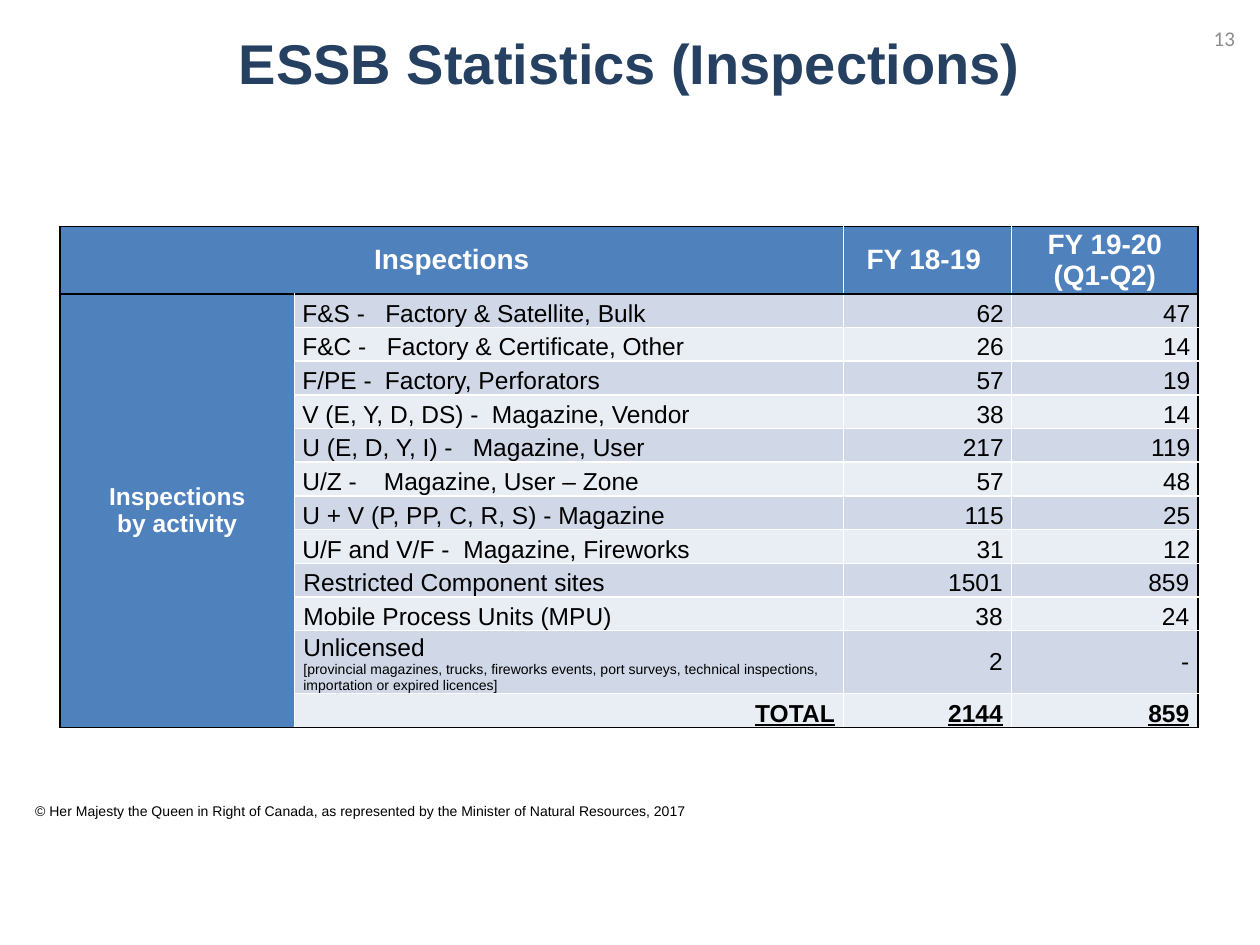
"""Builds the slide of ESSB inspection statistics."""
from copy import deepcopy

from pptx import Presentation, util as u
from pptx.dml.color import RGBColor
from pptx.enum import text as t
from pptx.oxml.ns import qn
from lxml import etree

Pt = u.Pt
LEFT, CENTER, RIGHT = t.PP_ALIGN.LEFT, t.PP_ALIGN.CENTER, t.PP_ALIGN.RIGHT
MIDDLE, BOTTOM = t.MSO_ANCHOR.MIDDLE, t.MSO_ANCHOR.BOTTOM
BLUE, BANDS = "4F81BD", ("E9EDF4", "D0D8E8")
BLACK, WHITE = "000000", "FFFFFF"

TITLE = "ESSB Statistics (Inspections)"
PAGE_NUMBER = "13"
COPYRIGHT = ("© Her Majesty the Queen in Right of Canada, as represented by "
             "the Minister of Natural Resources, 2017")
HEADINGS = ["Inspections", "", "FY 18-19 ", "FY 19-20 (Q1-Q2)"]
SIDE_HEADING = "Inspections\vby activity"
LICENSED = [
    ("F&S -\tFactory & Satellite, Bulk", "62", "47", 47.4),
    ("F&C -\tFactory & Certificate, Other", "26", "14", 48.3),
    ("F/PE -\tFactory, Perforators", "57", "19", 47.2),
    ("V (E, Y, D, DS) -\tMagazine, Vendor", "38", "14", 108.3),
    ("U (E, D, Y, I) -\tMagazine, User", "217", "119", 97.4),
    ("U/Z -\tMagazine, User – Zone", "57", "48", 46.6),
    ("U + V (P, PP, C, R, S) - Magazine", "115", "25", None),
    ("U/F and V/F -\tMagazine, Fireworks", "31", "12", 92),
]
OTHERS = [
    ("Restricted Component sites", "1501", "859", None),
    ("Mobile Process Units (MPU)", "38", "24", None),
    ("Unlicensed", "2", "-", None),
    ("TOTAL", "2144", "859", None),
]
UNLICENSED_NOTE = ("[provincial magazines, trucks, fireworks events, port surveys, "
                   "technical inspections, importation or expired licences]")
ROWS = LICENSED + OTHERS
LAST = len(ROWS)
NOTE_ROW = LAST - 1
COLUMN_WIDTHS = [134, 313.8, 96, 106.6]
ROW_HEIGHTS = [38.4] + [19.27] * (LAST - 2) + [36, 19.27]


def color(value):
    return RGBColor.from_string(value)


def write(para, text, size=14, font="Arial", fill=BLACK, bold=False,
          underline=False, align=LEFT, tab=None):
    """Fill a paragraph with formatted text."""
    if tab:
        stops = etree.SubElement(para._p.get_or_add_pPr(), qn("a:tabLst"))
        etree.SubElement(stops, qn("a:tab"), pos=str(Pt(tab)), algn="l")
    para.text = text
    para.alignment = align
    for span in para.runs:
        span.font.size, span.font.name = Pt(size), font
        span.font.bold, span.font.underline = bold, underline
        span.font.color.rgb = color(fill)
    for line_break in para._p.findall(qn("a:br")):
        line_break.append(deepcopy(para.runs[0].font._element))


def add_label(page, text, left, top, width, height, anchor, **style):
    box = page.shapes.add_textbox(Pt(left), Pt(top), Pt(width), Pt(height))
    box.text_frame.word_wrap = True
    box.text_frame.vertical_anchor = anchor
    write(box.text_frame.paragraphs[0], text, **style)


def set_borders(cell, row, column):
    """Draw black outer and header edges, and white edges elsewhere."""
    black_edges = {
        "L": column == 0,
        "R": column == 3,
        "T": row <= 1,
        "B": row in (0, LAST) or (row, column) == (1, 0),
    }
    props = cell._tc.get_or_add_tcPr()
    for side, black in black_edges.items():
        line = etree.SubElement(props, qn("a:ln" + side), w=str(Pt(1)))
        fill = etree.SubElement(line, qn("a:solidFill"))
        etree.SubElement(fill, qn("a:srgbClr"), val=BLACK if black else WHITE)


def format_cell(cell, row, column):
    set_borders(cell, row, column)
    cell.fill.solid()
    heading = row == 0 or column == 0
    cell.fill.fore_color.rgb = color(BLUE if heading else BANDS[row % 2])
    narrow = row <= len(LICENSED) and column > 0
    cell.margin_left = cell.margin_right = Pt(4.5 if narrow else 5.1)
    cell.margin_top = cell.margin_bottom = 0
    centered = heading or (row == NOTE_ROW and column > 1)
    cell.vertical_anchor = MIDDLE if centered else BOTTOM


def add_statistics(page):
    frame = page.shapes.add_table(LAST + 1, 4, Pt(34.3), Pt(129.5),
                                  Pt(sum(COLUMN_WIDTHS)), Pt(sum(ROW_HEIGHTS)))
    table = frame.table
    for column, width in zip(table.columns, COLUMN_WIDTHS):
        column.width = Pt(width)
    for row, height in zip(table.rows, ROW_HEIGHTS):
        row.height = Pt(height)
    for row in range(LAST + 1):
        for column in range(4):
            format_cell(table.cell(row, column), row, column)
    table.cell(0, 0).merge(table.cell(0, 1))
    table.cell(1, 0).merge(table.cell(LAST, 0))

    def put(row, column, text, **style):
        write(table.cell(row, column).text_frame.paragraphs[0], text, **style)

    heading = dict(fill=WHITE, bold=True, align=CENTER)
    for column, text in enumerate(HEADINGS):
        if text:
            put(0, column, text, size=16, **heading)
    put(1, 0, SIDE_HEADING, **heading)
    for row, (activity, *counts, tab) in enumerate(ROWS, 1):
        total = row == LAST
        style = dict(bold=total, underline=total)
        put(row, 1, activity, tab=tab, align=RIGHT if total else LEFT, **style)
        for column, count in enumerate(counts, 2):
            put(row, column, count, align=RIGHT, **style)
    note = table.cell(NOTE_ROW, 1).text_frame.add_paragraph()
    write(note, UNLICENSED_NOTE, size=8)


def main():
    deck = Presentation()
    deck.slide_width, deck.slide_height = Pt(720), Pt(540)
    page = deck.slides.add_slide(deck.slide_layouts[5])
    add_label(page, COPYRIGHT, 13, 455, 391.7, 26.6, t.MSO_ANCHOR.TOP, size=8)
    title = page.shapes.title
    title.left, title.top, title.width, title.height = Pt(36), Pt(16.6), Pt(648), Pt(38.2)
    title.text_frame.vertical_anchor = MIDDLE
    write(title.text_frame.paragraphs[0], TITLE, size=32, fill="254061",
          bold=True, align=CENTER)
    add_label(page, PAGE_NUMBER, 676, 7.2, 36.8, 28.8, MIDDLE, size=12,
              font="Calibri", fill="8C8C8C", align=RIGHT)
    add_statistics(page)
    deck.save("out.pptx")


if __name__ == "__main__":
    main()
